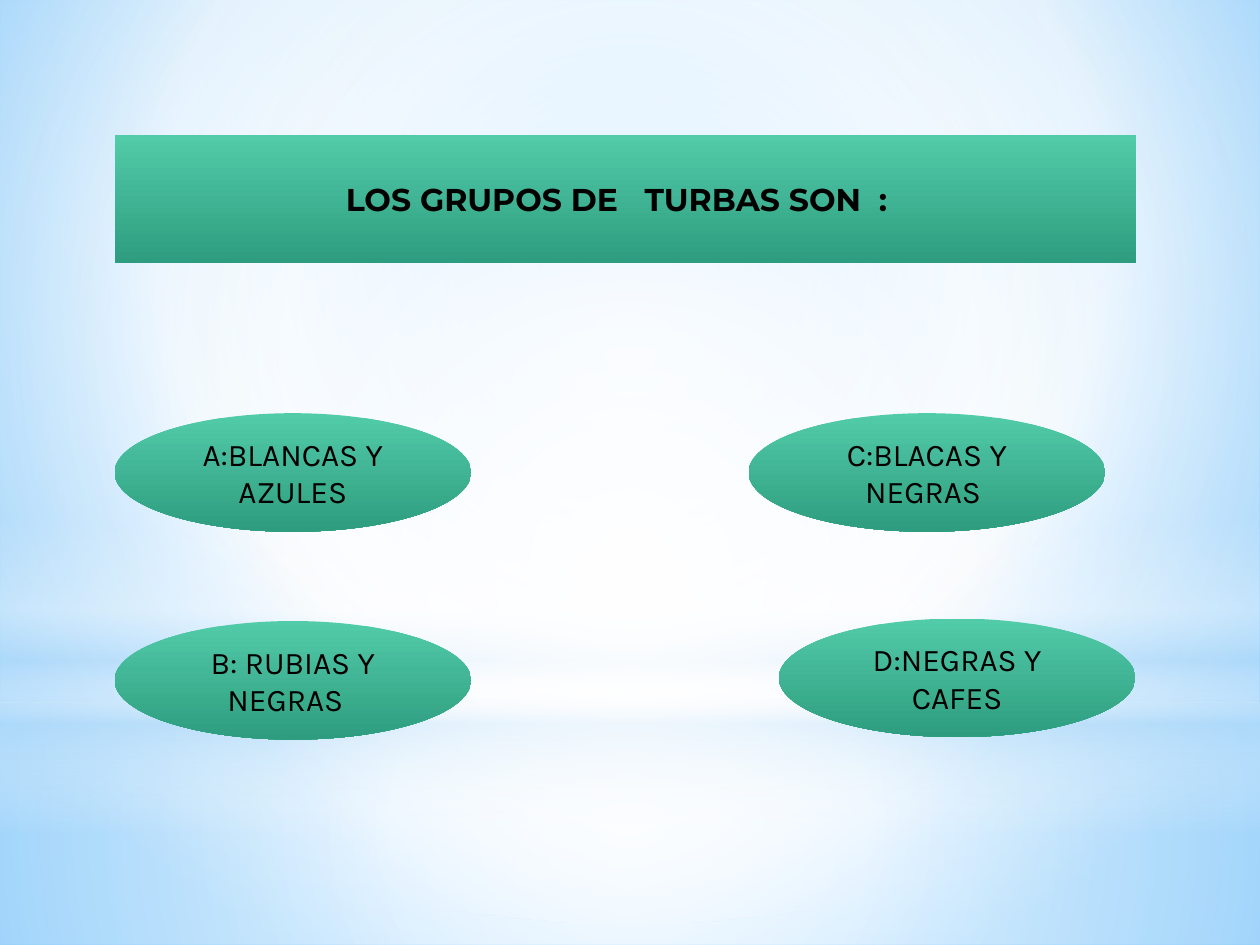
from lxml.etree import SubElement
from pptx import Presentation
from pptx.dml.color import RGBColor
from pptx.enum.shapes import MSO_SHAPE
from pptx.enum.text import MSO_ANCHOR, PP_ALIGN
from pptx.oxml.ns import qn
from pptx.util import Cm, Pt

COLOURS = {
    "sky": "9ED5FF", "blue": "5BB9FF", "pale": "B4DCFA", "white": "FFFFFF",
    "green": "52CBA9", "dark_green": "2E9D7F", "text": "000000",
}
CENTRE = (50, 50, 50, 50)
BACKGROUND_STOPS = [(0, "sky", 100), (60, "white", 100), (100, "blue", 100)]
GREEN_STOPS = [(0, "green", 100), (100, "dark_green", 100)]
GLOWS = [
    (MSO_SHAPE.RECTANGLE, 14.17, 4.88, CENTRE,
     [(0, "white", 91), (37, "white", 76), (100, "pale", 79)]),
    (MSO_SHAPE.RECTANGLE, 0, 14.17, CENTRE,
     [(0, "white", 89), (48, "white", 62), (100, "pale", 79)]),
    (MSO_SHAPE.RECTANGLE, 10.46, 6.35, None,
     [(0, "white", 0), (29, "white", 30), (45, "pale", 40),
      (55, "white", 26), (65, "pale", 60), (100, "white", 0)]),
    (MSO_SHAPE.OVAL, 4.45, 14.17, CENTRE,
     [(0, "white", 100), (56, "white", 0)]),
]
TITLE = "LOS GRUPOS DE   TURBAS SON  :  "
TITLE_BOX = (2.31, 2.72, 20.6, 2.59)
OPTIONS = [
    ("B: RUBIAS Y NEGRAS  ", 2.31, 12.52),
    ("A:BLANCAS Y AZULES", 2.31, 8.33),
    ("D:NEGRAS Y CAFES", 15.7, 12.47),
    ("C:BLACAS Y NEGRAS ", 15.09, 8.33),
]
OPTION_SIZE = (7.19, 2.39)
WIDTH, HEIGHT = 25.4, 19.05


def set_gradient(fill, properties, stops, focus=None):
    """Fill an element with a vertical gradient, or a circular one around a focus."""
    fill.background()
    empty = properties.find(qn("a:noFill"))
    gradient = SubElement(properties, qn("a:gradFill"), rotWithShape="1")
    properties.replace(empty, gradient)
    stop_list = SubElement(gradient, qn("a:gsLst"))
    for position, colour, opacity in stops:
        stop = SubElement(stop_list, qn("a:gs"), pos=str(position * 1000))
        value = SubElement(stop, qn("a:srgbClr"), val=COLOURS[colour])
        if opacity < 100:
            SubElement(value, qn("a:alpha"), val=str(opacity * 1000))
    if focus:
        path = SubElement(gradient, qn("a:path"), path="circle")
        edges = {side: str(inset * 1000) for side, inset in zip("ltrb", focus)}
        SubElement(path, qn("a:fillToRect"), edges)
    else:
        SubElement(gradient, qn("a:lin"), ang="5400000", scaled="0")


def add_gradient_shape(slide, kind, box, stops, focus=None):
    """Add a shape without outline or shadow, filled with a gradient."""
    shape = slide.shapes.add_shape(kind, *map(Cm, box))
    shape.shadow.inherit = False
    shape.line.fill.background()
    set_gradient(shape.fill, shape._element.spPr, stops, focus)
    return shape


def write_text(shape, text, font_name, bold=False):
    """Write one centred paragraph in a shape."""
    frame = shape.text_frame
    frame.text = text
    frame.word_wrap = True
    frame.vertical_anchor = MSO_ANCHOR.MIDDLE
    paragraph = frame.paragraphs[0]
    paragraph.alignment = PP_ALIGN.CENTER
    paragraph.font.name = font_name
    paragraph.font.size = Pt(18)
    paragraph.font.bold = bold
    paragraph.font.color.rgb = RGBColor.from_string(COLOURS["text"])


def main():
    """Build the slide and save it."""
    presentation = Presentation()
    presentation.slide_width, presentation.slide_height = Cm(WIDTH), Cm(HEIGHT)
    slide = presentation.slides.add_slide(presentation.slide_layouts[5])
    background = slide.background.fill
    properties = slide._element.find(".//" + qn("p:bgPr"))
    set_gradient(background, properties, BACKGROUND_STOPS, (20, 10, 20, 60))

    for kind, top, height, focus, stops in GLOWS:
        add_gradient_shape(slide, kind, (0, top, WIDTH, height), stops, focus)

    title = slide.shapes.title
    title.left, title.top, title.width, title.height = map(Cm, TITLE_BOX)
    set_gradient(title.fill, title._element.spPr, GREEN_STOPS)
    write_text(title, TITLE, "Montserrat", bold=True)
    slide.shapes._spTree.append(title._element)

    for text, left, top in OPTIONS:
        option = add_gradient_shape(
            slide, MSO_SHAPE.OVAL, (left, top, *OPTION_SIZE), GREEN_STOPS)
        write_text(option, text, "Karla")

    presentation.save("out.pptx")


if __name__ == "__main__":
    main()
